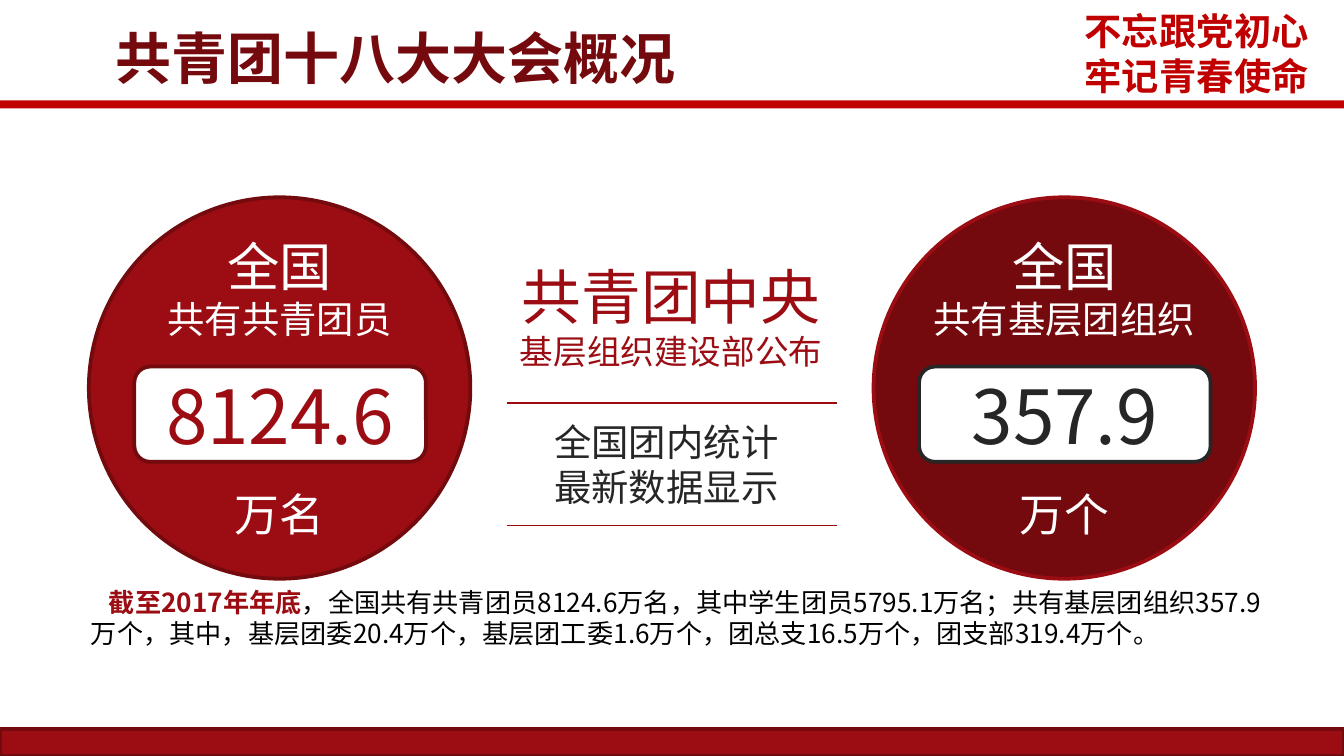
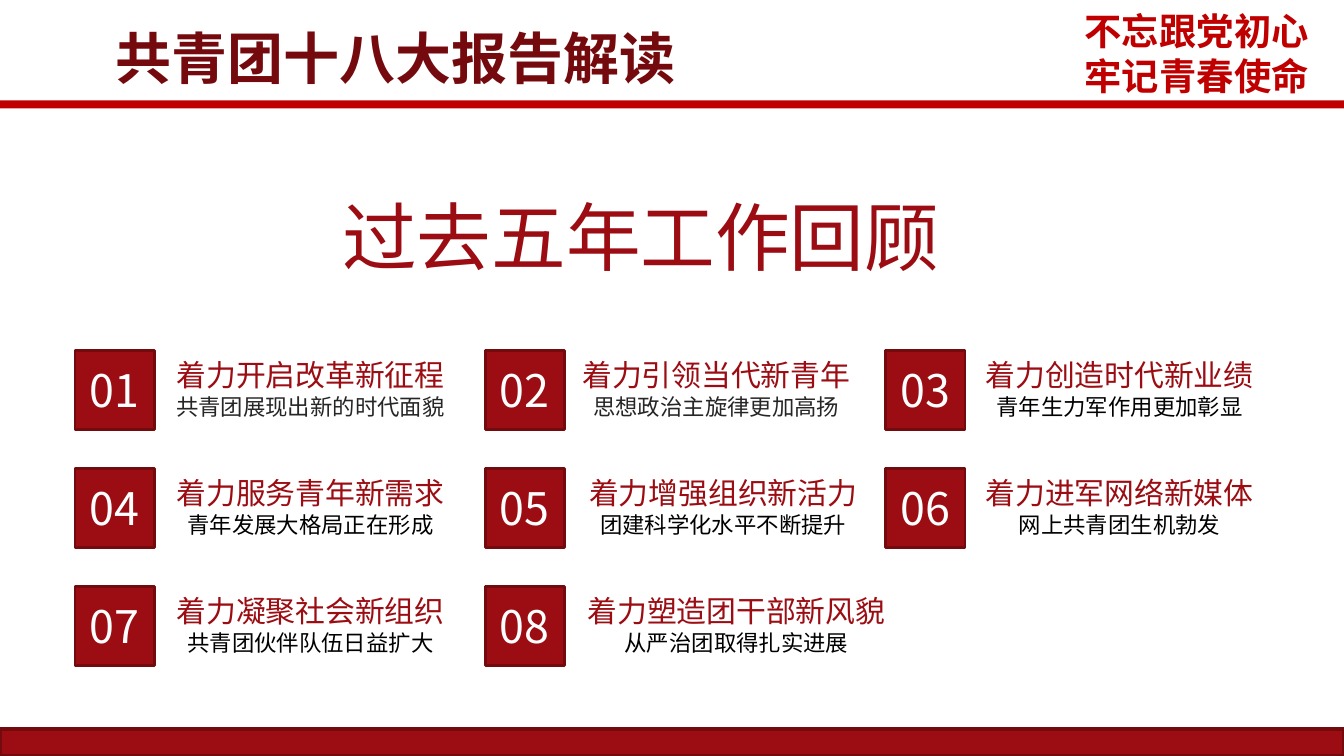
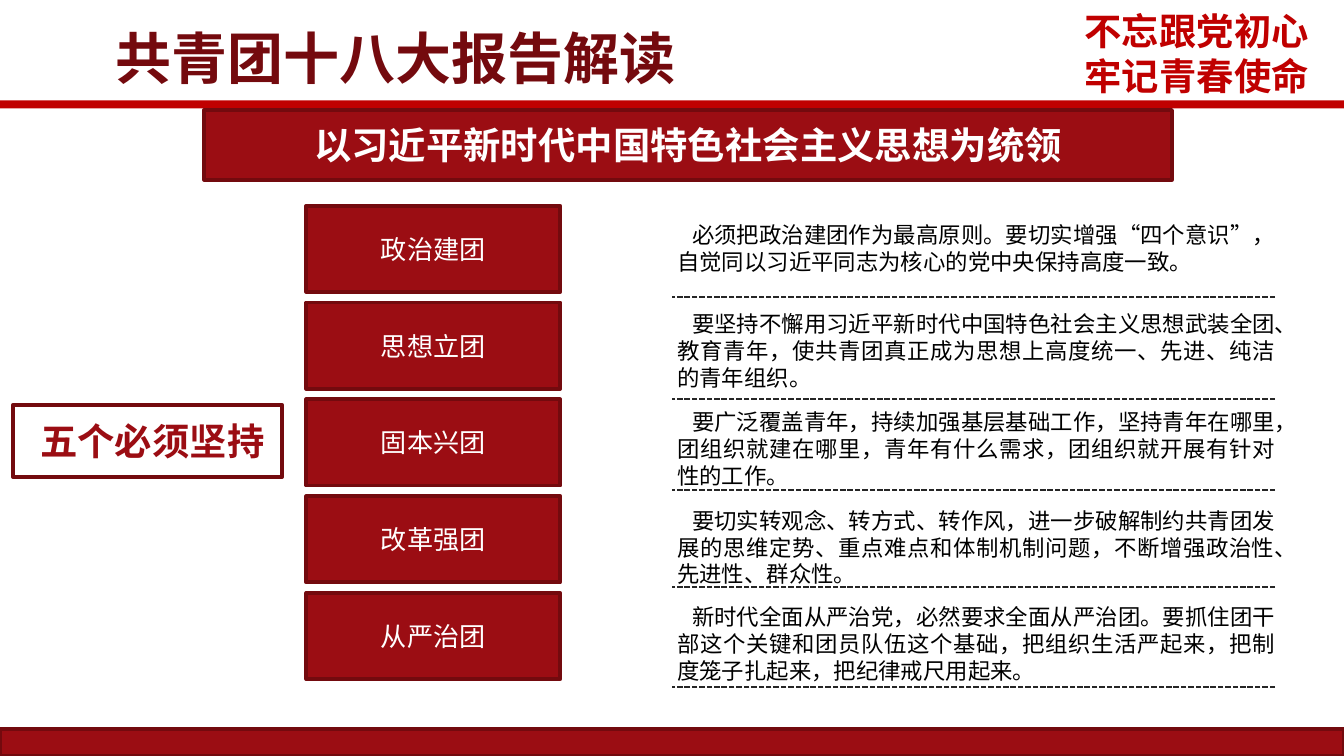
from lxml import etree
from pptx import Presentation
from pptx.dml.color import RGBColor
from pptx.enum.dml import MSO_LINE
from pptx.enum.shapes import MSO_CONNECTOR, MSO_SHAPE
from pptx.enum.text import MSO_ANCHOR, PP_ALIGN
from pptx.oxml.ns import qn
from pptx.util import Cm, Pt

RECT, OVAL, ROUNDED = MSO_SHAPE.RECTANGLE, MSO_SHAPE.OVAL, MSO_SHAPE.ROUNDED_RECTANGLE
STRAIGHT = MSO_CONNECTOR.STRAIGHT
DASH = MSO_LINE.SQUARE_DOT
LEFT, CENTER, JUSTIFY = PP_ALIGN.LEFT, PP_ALIGN.CENTER, PP_ALIGN.JUSTIFY
TOP, MIDDLE = MSO_ANCHOR.TOP, MSO_ANCHOR.MIDDLE

FONT = "Noto Sans CJK SC"
WIDTH, HEIGHT = 25.4, 14.29
COLORS = {
    "red": "9B0D13",
    "border": "730A0E",
    "dark": "740A0E",
    "bright": "C00000",
    "rule": "9B090F",
    "ink": "262626",
    "black": "000000",
    "white": "FFFFFF",
}


def color(name):
    return RGBColor.from_string(COLORS[name])


def write(frame, text, size=12, fill="black", bold=False, align=CENTER, indent=0, join=False):
    paragraph = frame.paragraphs[-1]
    if paragraph.runs and not join:
        paragraph = frame.add_paragraph()
    if not join:
        paragraph.alignment = align
    if indent:
        properties = paragraph._p.get_or_add_pPr()
        properties.set("marL", "0")
        properties.set("indent", str(Cm(indent)))
    run = paragraph.add_run()
    run.text = text
    run.font.size = Pt(size)
    run.font.bold = bold
    run.font.color.rgb = color(fill)
    run.font.name = FONT
    etree.SubElement(run._r.get_or_add_rPr(), qn("a:ea"), typeface=FONT)


class Deck:
    def __init__(self):
        self.presentation = Presentation()
        self.presentation.slide_width = Cm(WIDTH)
        self.presentation.slide_height = Cm(HEIGHT)
        self.slide = None

    def start(self, title):
        self.slide = self.presentation.slides.add_slide(self.presentation.slide_layouts[6])
        self.shape(RECT, 0, 13.78, WIDTH, 0.51)
        self.shape(RECT, 0, 1.9, WIDTH, 0.15, fill="bright", line=None)
        motto = self.box(19.71, 0.03, 5.82, 1.96)
        write(motto, "不忘跟党初心", size=20, fill="bright", bold=True, indent=-0.49)
        write(motto, "牢记青春使命", size=20, fill="bright", bold=True)
        heading = self.box(2.01, 0.34, 14.12, 1.47, inset=(0.18, 0.1))
        write(heading, title, size=30, fill="dark", bold=True, align=LEFT)

    def shape(self, kind, left, top, width, height, fill="red", line="border", weight=2):
        shape = self.slide.shapes.add_shape(kind, Cm(left), Cm(top), Cm(width), Cm(height))
        shape.shadow.inherit = False
        shape.fill.solid()
        shape.fill.fore_color.rgb = color(fill)
        if line:
            shape.line.color.rgb = color(line)
            shape.line.width = Pt(weight)
        else:
            shape.line.fill.background()
        shape.text_frame.vertical_anchor = MIDDLE
        return shape.text_frame

    def box(self, left, top, width, height, wrap=True, inset=(0.25, 0.13)):
        frame = self.slide.shapes.add_textbox(Cm(left), Cm(top), Cm(width), Cm(height)).text_frame
        frame.word_wrap = wrap
        frame.vertical_anchor = TOP
        frame.margin_left = frame.margin_right = Cm(inset[0])
        frame.margin_top = frame.margin_bottom = Cm(inset[1])
        return frame

    def rule(self, start, end, y, line, weight, dash=None):
        rule = self.slide.shapes.add_connector(STRAIGHT, Cm(start), Cm(y), Cm(end), Cm(y))
        rule.line.color.rgb = color(line)
        rule.line.width = Pt(weight)
        if dash:
            rule.line.dash_style = dash
        etree.SubElement(rule._element.spPr, qn("a:effectLst"))


def overview(deck):
    deck.start("共青团十八大大会概况")
    summary = deck.box(1.47, 10.95, 22.73, 2.06)
    write(summary, "截至2017年年底", size=14, fill="red", bold=True, align=LEFT, indent=0.34)
    write(summary, "，全国共有共青团员8124.6万名，其中学生团员5795.1万名；共有基层团组织357.9万个，"
          "其中，基层团委20.4万个，基层团工委1.6万个，团总支16.5万个，团支部319.4万个。",
          size=14, join=True)

    diameter = 7.21
    totals = [
        (1.68, "共有共青团员", "8124.6", "万名", "red", "border", "border", "red"),
        (16.51, "共有基层团组织", "357.9", "万个", "dark", "red", "ink", "ink"),
    ]
    for left, subject, number, unit, disc, ring, frame, digits in totals:
        deck.shape(OVAL, left, 3.73, diameter, diameter, fill=disc, line=ring)
        plate = deck.shape(ROUNDED, left + 0.86, 6.93, 5.51, 1.8, fill="white", line=frame)
        write(plate, number, size=40, fill=digits)
        scope = deck.box(left, 4.29, diameter, 2.31)
        write(scope, "全国", size=28, fill="white")
        write(scope, subject, size=20, fill="white")
        write(deck.box(left, 9.07, diameter, 1.3), unit, size=24, fill="white")

    publisher = deck.box(9.32, 4.78, 6.73, 2.39)
    write(publisher, "共青团中央", size=32, fill="red")
    write(publisher, "基层组织建设部公布", size=18, fill="red")
    statistics = deck.box(9.37, 7.8, 6.45, 1.96)
    for line in ("全国团内统计", "最新数据显示"):
        write(statistics, line, size=20, fill="ink")
    for y in (7.62, 9.93):
        deck.rule(9.58, 15.82, y, "rule", 0.75)


def review(deck):
    deck.start("共青团十八大报告解读")
    write(deck.box(6.22, 3.48, 12.01, 1.96, wrap=False), "过去五年工作回顾",
          size=40, fill="red", align=LEFT)
    columns = (1.42, 9.17, 16.74)
    achievements = [
        (5.87, "着力开启改革新征程", "共青团展现出新的时代面貌", "ink"),
        (13.54, "着力引领当代新青年", "思想政治主旋律更加高扬", "ink"),
        (21.16, "着力创造时代新业绩", "青年生力军作用更加彰显", "black"),
        (5.87, "着力服务青年新需求", "青年发展大格局正在形成", "black"),
        (13.67, "着力增强组织新活力", "团建科学化水平不断提升", "black"),
        (21.16, "着力进军网络新媒体", "网上共青团生机勃发", "black"),
        (5.87, "着力凝聚社会新组织", "共青团伙伴队伍日益扩大", "black"),
        (13.92, "着力塑造团干部新风貌", "从严治团取得扎实进展", "black"),
    ]
    caption_width = 6.5
    for index, (middle, effort, result, ink) in enumerate(achievements):
        row, column = divmod(index, len(columns))
        top = 6.62 + 2.23 * row
        caption = deck.box(middle - caption_width / 2, top, caption_width, 1.45)
        write(caption, effort, size=16, fill="red")
        write(caption, result, fill=ink)
        number = deck.shape(RECT, columns[column], top, 1.5, 1.5, weight=1.5)
        write(number, f"{index + 1:02}", size=24, fill="white")


def principles(deck):
    deck.start("共青团十八大报告解读")
    deck.shape(RECT, 0.25, 7.65, 5.08, 1.37, fill="white")
    write(deck.box(0.43, 7.77, 4.9, 1.12), "五个必须坚持", size=20, fill="red", bold=True)
    banner = deck.shape(RECT, 3.86, 2.08, 18.29, 1.32)
    write(banner, "以习近平新时代中国特色社会主义思想为统领", size=20, fill="white", bold=True)
    duties = [
        ("政治建团", 4.06, 5.61,
         "必须把政治建团作为最高原则。要切实增强“四个意识”，自觉同以习近平同志为核心的党中央保持高度一致。"),
        ("思想立团", 5.74, 7.54,
         "要坚持不懈用习近平新时代中国特色社会主义思想武装全团、教育青年，"
         "使共青团真正成为思想上高度统一、先进、纯洁的青年组织。"),
        ("固本兴团", 7.59, 9.27,
         "要广泛覆盖青年，持续加强基层基础工作，坚持青年在哪里，团组织就建在哪里，"
         "青年有什么需求，团组织就开展有针对性的工作。"),
        ("改革强团", 9.45, 11.1,
         "要切实转观念、转方式、转作风，进一步破解制约共青团发展的思维定势、"
         "重点难点和体制机制问题，不断增强政治性、先进性、群众性。"),
        ("从严治团", 11.28, 12.98,
         "新时代全面从严治党，必然要求全面从严治团。要抓住团干部这个关键和团员队伍这个基础，"
         "把组织生活严起来，把制度笼子扎起来，把纪律戒尺用起来。"),
    ]
    for index, (duty, top, underline, meaning) in enumerate(duties):
        write(deck.shape(RECT, 5.79, 3.89 + 1.83 * index, 4.8, 1.63), duty, size=14, fill="white")
        write(deck.box(12.55, top, 11.81, 1.8), meaning, align=JUSTIFY, indent=0.28)
        deck.rule(24.1, 12.7, underline, "ink", 1, dash=DASH)


def main():
    deck = Deck()
    overview(deck)
    review(deck)
    principles(deck)
    deck.presentation.save("out.pptx")


if __name__ == "__main__":
    main()
